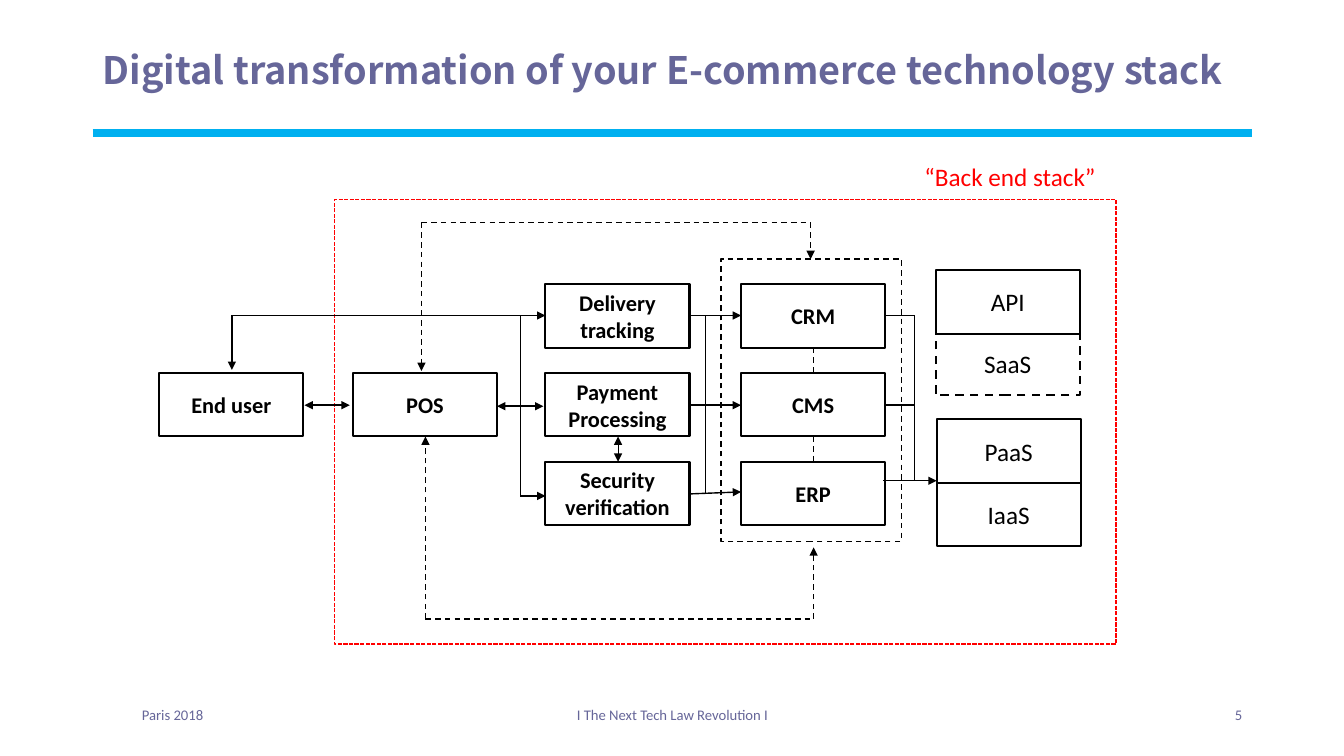
from lxml import etree
from pptx import Presentation
from pptx.dml.color import RGBColor
from pptx.enum.dml import MSO_LINE
from pptx.enum.shapes import MSO_CONNECTOR, MSO_SHAPE
from pptx.enum.text import MSO_ANCHOR, MSO_AUTO_SIZE, PP_ALIGN
from pptx.oxml.ns import qn
from pptx.util import Inches, Pt

LEFT, CENTER, RIGHT = PP_ALIGN.LEFT, PP_ALIGN.CENTER, PP_ALIGN.RIGHT
TOP, MIDDLE = MSO_ANCHOR.TOP, MSO_ANCHOR.MIDDLE
SOLID, DASH, FINE_DASH = MSO_LINE.SOLID, MSO_LINE.DASH, MSO_LINE.SQUARE_DOT
RECTANGLE, STRAIGHT = MSO_SHAPE.RECTANGLE, MSO_CONNECTOR.STRAIGHT

COLORS = {"accent": "00B0F0", "heading": "666699", "ink": "000000",
          "paper": "FFFFFF", "boundary": "FF0000"}
BODY_FONT, TITLE_FONT = "Calibri", "Noto Sans CJK KR"

# Content
TITLE = "Digital transformation of your E-commerce technology stack"
BOUNDARY_LABEL = "“Back end stack”"
FOOTERS = [  # text, left, width, alignment
    ("Paris 2018", 1.31, 2.6, LEFT),
    ("I The Next Tech Law Revolution I", 4.42, 4.5, CENTER),
    ("5", 9.42, 3, RIGHT),
]

# Diagram grid
BOX_WIDTH, BOX_HEIGHT = 1.43, 0.63
USER, POS, SERVICE, SYSTEM, CLOUD = 1.58, 3.5, 5.41, 7.35, 9.29
ROW_TOPS = [2.82, 3.7, 4.58]
ROW_1, ROW_2, ROW_3 = 3.13, 4.02, 4.92
BRANCH, MERGE, CLOUD_BUS = 5.16, 7.0, 9.07
USER_MIDDLE, POS_MIDDLE, SYSTEM_MIDDLE = 2.3, 4.22, 8.07
LOOP_X, LOOP_TOP, LOOP_BOTTOM, LOOP_END = 4.18, 2.21, 6.14, 8.04
CLOUD_ENTRY = 4.77
SERVICE_RIGHT = SERVICE + BOX_WIDTH
SYSTEM_RIGHT = SYSTEM + BOX_WIDTH

PROCESS_BOXES = [("End user", USER, ROW_TOPS[1]), ("POS", POS, ROW_TOPS[1])]
for names, column in (
        (("Delivery tracking", "Payment Processing", "Security verification"), SERVICE),
        (("CRM", "CMS", "ERP"), SYSTEM)):
    PROCESS_BOXES += [(name, column, top) for name, top in zip(names, ROW_TOPS)]

CLOUD_BOXES = [  # text, left, top, dash
    ("SaaS", 9.28, 3.29, DASH),
    ("API", 9.28, 2.68, SOLID),
    ("PaaS", CLOUD, 4.16, SOLID),
    ("IaaS", CLOUD, 4.16 + BOX_HEIGHT, SOLID),
]

FRAMES = [  # left, top, width, height, color, dash
    (7.15, 2.57, 1.79, 2.8, "ink", DASH),
    (3.32, 1.98, 7.75, 4.41, "boundary", FINE_DASH),
]

PLAIN_LINES = [
    (MERGE, ROW_1, MERGE, 4.9),
    (BRANCH, ROW_2, BRANCH, ROW_1),
    (BRANCH, ROW_3, BRANCH, ROW_2),
    (BRANCH, ROW_1, USER_MIDDLE, ROW_1),
    (CLOUD_BUS, ROW_1, CLOUD_BUS, CLOUD_ENTRY),
    (SYSTEM_RIGHT, ROW_1, CLOUD_BUS, ROW_1),
    (SYSTEM_RIGHT, ROW_2, CLOUD_BUS, ROW_2),
]
ARROWS = [
    (BRANCH, ROW_1, SERVICE, ROW_1),
    (BRANCH, ROW_3, SERVICE, ROW_3),
    (USER_MIDDLE, ROW_1, USER_MIDDLE, 3.67),
    (SERVICE_RIGHT, ROW_1, SYSTEM, ROW_1),
    (SERVICE_RIGHT, ROW_2, SYSTEM, ROW_2),
    (SERVICE_RIGHT, 4.9, SYSTEM, 4.88),
    (8.76, CLOUD_ENTRY, CLOUD, CLOUD_ENTRY),
]
DASHED_LINES = [
    (POS_MIDDLE, LOOP_BOTTOM, LOOP_END, LOOP_BOTTOM),
    (LOOP_X, LOOP_TOP, LOOP_END, LOOP_TOP),
    (SYSTEM_MIDDLE, 3.45, SYSTEM_MIDDLE, 3.7),
    (SYSTEM_MIDDLE, 4.33, SYSTEM_MIDDLE, 4.58),
]
DASHED_ARROWS = [
    (POS_MIDDLE, LOOP_BOTTOM, POS_MIDDLE, 4.33),
    (LOOP_X, LOOP_TOP, LOOP_X, 3.68),
    (LOOP_END, LOOP_TOP, LOOP_END, 2.57),
    (SYSTEM_MIDDLE, LOOP_BOTTOM, SYSTEM_MIDDLE, 5.43),
]
TWO_WAY_ARROWS = [(3.02, ROW_2, 3.47, ROW_2), (4.93, 4.03, 5.39, 4.03)]
SMALL_TWO_WAY_ARROWS = [(6.13, 4.33, 6.13, 4.58)]

LINE_STYLES = [  # lines, width, dash, arrowheads
    (PLAIN_LINES, 1, SOLID, ()),
    (ARROWS, 1, SOLID, ("tailEnd",)),
    (DASHED_LINES, 1, DASH, ()),
    (DASHED_ARROWS, 1, DASH, ("tailEnd",)),
    (TWO_WAY_ARROWS, 1.5, SOLID, ("headEnd", "tailEnd")),
    (SMALL_TWO_WAY_ARROWS, 0.5, SOLID, ("headEnd", "tailEnd")),
]


def rgb(name):
    return RGBColor.from_string(COLORS[name])


def write(shape, text, size, color, align=CENTER, bold=False, font=BODY_FONT, anchor=MIDDLE):
    frame = shape.text_frame
    frame.text = text
    frame.word_wrap = True
    frame.auto_size = MSO_AUTO_SIZE.NONE
    frame.vertical_anchor = anchor
    paragraph = frame.paragraphs[0]
    paragraph.alignment = align
    paragraph.font.name = font
    paragraph.font.size = Pt(size)
    paragraph.font.bold = bold
    paragraph.font.color.rgb = rgb(color)
    return paragraph


def set_line(line, color, width, dash):
    line.color.rgb = rgb(color)
    line.width = Pt(width)
    line.dash_style = dash


def add_rectangle(slide, left, top, width, height, line=None, width_pt=1.5, dash=SOLID, filled=True):
    shape = slide.shapes.add_shape(RECTANGLE, Inches(left), Inches(top),
                                   Inches(width), Inches(height))
    shape.shadow.inherit = False
    if filled:
        shape.fill.solid()
        shape.fill.fore_color.rgb = rgb("paper")
    else:
        shape.fill.background()
    if line:
        set_line(shape.line, line, width_pt, dash)
    else:
        shape.line.fill.background()
    return shape


def add_line(slide, ends, color="ink", width=1, dash=SOLID, arrowheads=()):
    connector = slide.shapes.add_connector(STRAIGHT, *[Inches(value) for value in ends])
    set_line(connector.line, color, width, dash)
    outline = connector.line._get_or_add_ln()
    for arrowhead in arrowheads:
        etree.SubElement(outline, qn("a:" + arrowhead), type="triangle")
    etree.SubElement(outline.getparent(), qn("a:effectLst"))


def main():
    presentation = Presentation()
    presentation.slide_width, presentation.slide_height = Inches(13.33), Inches(7.5)
    slide = presentation.slides.add_slide(presentation.slide_layouts[5])

    # Title and rule
    add_line(slide, (0.92, 1.32, 12.42, 1.32), "accent", 6)
    title = slide.shapes.title
    title.left, title.top = Inches(0.92), Inches(0.46)
    title.width, title.height = Inches(11.5), Inches(0.88)
    write(title, TITLE, 27, "heading", LEFT, True, TITLE_FONT, TOP).line_spacing = 0.9

    # Footer
    for text, left, width, align in FOOTERS:
        footer = slide.shapes.add_textbox(Inches(left), Inches(6.95), Inches(width), Inches(0.4))
        write(footer, text, 10.5, "heading", align, anchor=TOP)

    # Boxes
    for text, left, top in PROCESS_BOXES:
        box = add_rectangle(slide, left, top, BOX_WIDTH, BOX_HEIGHT, "ink")
        write(box, text, 16, "ink", bold=True)
    for text, left, top, dash in CLOUD_BOXES:
        box = add_rectangle(slide, left, top, BOX_WIDTH, BOX_HEIGHT, "ink", dash=dash)
        write(box, text, 18, "ink")

    # Boundaries and label
    label = add_rectangle(slide, 9.07, 1.45, 2.08, 0.6)
    write(label, BOUNDARY_LABEL, 18, "boundary", LEFT)
    for left, top, width, height, color, dash in FRAMES:
        add_rectangle(slide, left, top, width, height, color, 1, dash, filled=False)

    # Connections
    for lines, width, dash, arrowheads in LINE_STYLES:
        for ends in lines:
            add_line(slide, ends, "ink", width, dash, arrowheads)

    presentation.save("out.pptx")


if __name__ == "__main__":
    main()
